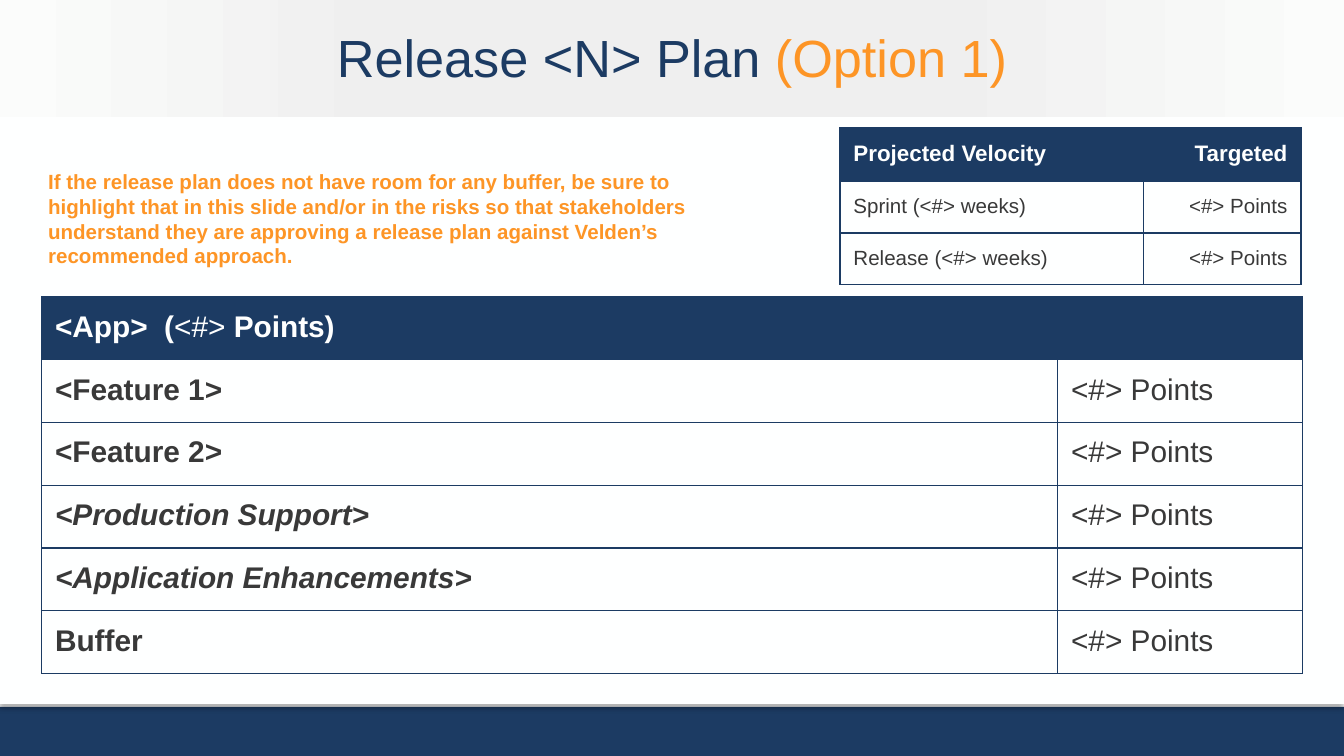
from dataclasses import dataclass

from lxml.etree import SubElement
from pptx import Presentation
from pptx.dml.color import RGBColor
from pptx.enum.shapes import MSO_SHAPE
from pptx.enum.text import MSO_ANCHOR, PP_ALIGN
from pptx.oxml.ns import qn
from pptx.util import Inches, Length, Pt

NAVY = RGBColor(0x1C, 0x3B, 0x63)
ORANGE = RGBColor(0xFD, 0x95, 0x26)
WHITE = RGBColor(0xFE, 0xFF, 0xFF)
CHARCOAL = RGBColor(0x39, 0x39, 0x39)
PALE_GREY = RGBColor(0xEF, 0xEF, 0xEF)
FAINT_GREY = RGBColor(0xFB, 0xFC, 0xFB)
BLACK = RGBColor(0, 0, 0)

FONT = "Arial"
SLIDE_WIDTH = Inches(10)
SLIDE_HEIGHT = Inches(5.625)
GRID_COLUMNS = 100  # square grid: rows are as tall as columns are wide


def grid(count: float) -> Length:
    return Length(round(SLIDE_WIDTH * count / GRID_COLUMNS))


@dataclass
class Area:
    left: float
    top: float
    width: float
    height: float

    def lengths(self) -> list[Length]:
        return [grid(side) for side in (self.left, self.top, self.width, self.height)]


@dataclass
class Span:
    text: str
    color: RGBColor = CHARCOAL
    bold: bool = False
    italic: bool = False


@dataclass
class Cell:
    spans: list[Span]
    align: PP_ALIGN = PP_ALIGN.LEFT
    fill: RGBColor = WHITE


@dataclass
class Grid:
    area: Area
    column_widths: list[float]
    row_heights: list[float]
    size: float
    cells: list[list[Cell]]


def write(frame, spans: list[Span], size: float, align: PP_ALIGN) -> None:
    para = frame.paragraphs[0]
    para.alignment = align
    for span in spans:
        run = para.add_run()
        run.text = span.text
        run.font.name = FONT
        run.font.size = Pt(size)
        run.font.bold = span.bold
        run.font.italic = span.italic
        run.font.color.rgb = span.color


def set_margins(holder, side: float, end: float) -> None:
    holder.margin_left = holder.margin_right = grid(side)
    holder.margin_top = holder.margin_bottom = grid(end)


def add_text(page, area: Area, spans: list[Span], size: float, align: PP_ALIGN,
             anchor: MSO_ANCHOR, end_margin: float) -> None:
    frame = page.shapes.add_textbox(*area.lengths()).text_frame
    frame.word_wrap = True
    frame.vertical_anchor = anchor
    set_margins(frame, 1, end_margin)
    write(frame, spans, size, align)


def add_panel(page, area: Area, color: RGBColor):
    panel = page.shapes.add_shape(MSO_SHAPE.RECTANGLE, *area.lengths())
    panel.shadow.inherit = False
    panel.fill.solid()
    panel.fill.fore_color.rgb = color
    panel.line.fill.background()
    return panel


def add_color(parent, color: RGBColor):
    return SubElement(parent, qn("a:srgbClr"), val=str(color))


def cast_shadow(panel) -> None:
    effects = panel._element.spPr.find(qn("a:effectLst"))
    shadow = SubElement(effects, qn("a:outerShdw"), blurRad=str(Pt(3.1)),
                        dist=str(Pt(1.8)), dir="5400000", rotWithShape="0")
    SubElement(add_color(shadow, BLACK), qn("a:alpha"), val="35000")


def shade_across(panel, stops: list[tuple[int, RGBColor]]) -> None:
    panel.fill.gradient()
    panel.fill.gradient_angle = 0
    stop_list = panel._element.spPr.find(qn("a:gradFill")).find(qn("a:gsLst"))
    for old_stop in list(stop_list):
        stop_list.remove(old_stop)
    for percent, color in stops:
        add_color(SubElement(stop_list, qn("a:gs"), pos=str(percent * 1000)), color)


def add_borders(cell) -> None:
    properties = cell._tc.get_or_add_tcPr()
    for side in ("a:lnL", "a:lnR", "a:lnT", "a:lnB"):
        line = SubElement(properties, qn(side), w=str(Pt(0.75)))
        add_color(SubElement(line, qn("a:solidFill")), NAVY)


def add_grid(page, content: Grid):
    table = page.shapes.add_table(len(content.row_heights), len(content.column_widths),
                                  *content.area.lengths()).table
    table.first_row = table.horz_banding = False
    for column, width in zip(table.columns, content.column_widths):
        column.width = grid(width)
    for row, height, entries in zip(table.rows, content.row_heights, content.cells):
        row.height = grid(height)
        for cell, entry in zip(row.cells, entries):
            add_borders(cell)
            cell.fill.solid()
            cell.fill.fore_color.rgb = entry.fill
            set_margins(cell, 1, 1)
            write(cell.text_frame, entry.spans, content.size, entry.align)
    return table


def header(text: str, align: PP_ALIGN = PP_ALIGN.LEFT) -> Cell:
    return Cell([Span(text, WHITE, bold=True)], align, NAVY)


def points(align: PP_ALIGN = PP_ALIGN.LEFT) -> Cell:
    return Cell([Span("<#> Points")], align)


def main() -> None:
    deck = Presentation()
    deck.slide_width, deck.slide_height = SLIDE_WIDTH, SLIDE_HEIGHT
    page = deck.slides.add_slide(deck.slide_layouts[6])
    page.background.fill.solid()
    page.background.fill.fore_color.rgb = WHITE

    # Footer bar, body panel and title band
    add_panel(page, Area(0, 52.6, 100, 3.65), NAVY)
    cast_shadow(add_panel(page, Area(0, 0, 100, 52.4), WHITE))
    band = add_panel(page, Area(0, 0, 100, 8.7), PALE_GREY)
    shade_across(band, [(0, FAINT_GREY), (29, PALE_GREY), (69, PALE_GREY), (100, FAINT_GREY)])

    # Title
    add_text(page, Area(0, 1.6, 100, 5.2),
             [Span("Release <N> Plan ", NAVY), Span("(Option 1)", ORANGE)],
             28, PP_ALIGN.CENTER, MSO_ANCHOR.MIDDLE, 0.5)

    # Velocity table
    velocity_rows = [[Cell([Span(f"{period} (<#> weeks)")]), points(PP_ALIGN.RIGHT)]
                     for period in ("Sprint", "Release")]
    add_grid(page, Grid(
        Area(62.5, 9.5, 34.3, 11.3), [22.6, 11.7], [3.9, 3.7, 3.7], 11, velocity_rows[:0] + [
            [header("Projected Velocity"), header("Targeted", PP_ALIGN.RIGHT)], *velocity_rows]
    ))
    velocity = page.shapes[-1].table
    for cell in velocity.rows[0].cells:
        cell.text_frame.paragraphs[0].runs[0].font.size = Pt(12)

    # Feature table
    app_header = Cell([Span("<App>  (", WHITE, True), Span("<#>", WHITE),
                       Span(" Points)", WHITE, True)], fill=NAVY)
    features = [("<Feature 1>", False), ("<Feature 2>", False), ("<Production Support>", True),
                ("<Application Enhancements>", True), ("Buffer", False)]
    feature_rows = [[Cell([Span(name, bold=True, italic=italic)]), points()]
                    for name, italic in features]
    plan = add_grid(page, Grid(
        Area(3.1, 22.1, 93.8, 26.8), [75.6, 18.2], [4.47] * 6, 16,
        [[app_header, Cell([], fill=NAVY)], *feature_rows]))
    plan.cell(0, 0).merge(plan.cell(0, 1))

    # Buffer advice
    advice = ("If the release plan does not have room for any buffer, be sure to highlight that "
              "in this slide and/or in the risks so that stakeholders understand they are "
              "approving a release plan against Velden’s recommended approach.")
    add_text(page, Area(2.6, 11.6, 53.6, 8.7), [Span(advice, ORANGE, bold=True)],
             11, PP_ALIGN.LEFT, MSO_ANCHOR.TOP, 1)

    deck.save("out.pptx")


if __name__ == "__main__":
    main()
